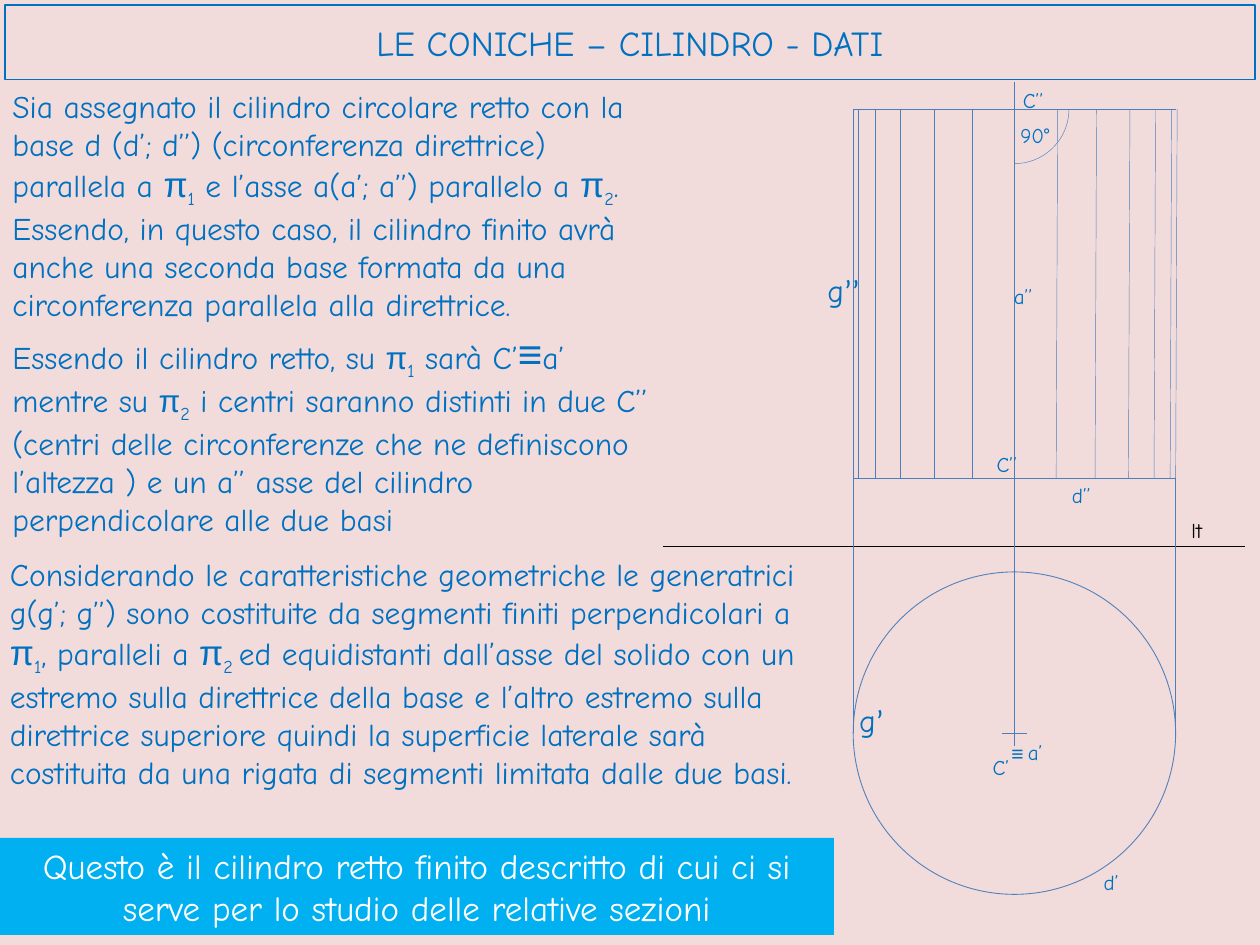
from math import cos, radians

from lxml import etree
from pptx import Presentation
from pptx.dml.color import RGBColor
from pptx.enum.shapes import MSO_CONNECTOR, MSO_SHAPE
from pptx.enum.text import MSO_ANCHOR, MSO_AUTO_SIZE, PP_ALIGN
from pptx.oxml.ns import qn
from pptx.util import Cm, Pt

STRAIGHT = MSO_CONNECTOR.STRAIGHT
RECT, OVAL, ARC = MSO_SHAPE.RECTANGLE, MSO_SHAPE.OVAL, MSO_SHAPE.ARC
TOP, MIDDLE = MSO_ANCHOR.TOP, MSO_ANCHOR.MIDDLE
LEFT, CENTER = PP_ALIGN.LEFT, PP_ALIGN.CENTER
GROW = MSO_AUTO_SIZE.SHAPE_TO_FIT_TEXT

COLORS = {
    "back": "F2DCDB",
    "text": "0070C0",
    "line": "4B7EBC",
    "curve": "4F81BD",
    "band": "00B0F0",
    "white": "FFFFFF",
    "black": "000000",
}
FONT, SIGN, MARK = "Comic Neue", "Arial", "Calibri"

AXIS, RADIUS = 20.45, 3.25
CENTRE = 14.78
UPPER, LOWER = 2.2, 9.65
GROUND = 11.02


def rgb(name):
    return RGBColor.from_string(COLORS[name])


def plane(number, size):
    return [("π", size, SIGN), (number, 18, FONT, True)]


def add_run(para, text, size=18, font=FONT, sub=False, color="text"):
    run = para.add_run()
    run.text = text
    run.font.size = Pt(size)
    run.font.name = font
    run.font.color.rgb = rgb(color)
    if sub:
        run.font._element.set("baseline", "-25000")
    return run


def fill_text(frame, paras, color="text", align=LEFT, anchor=TOP):
    frame.word_wrap = True
    frame.auto_size = GROW
    frame.vertical_anchor = anchor
    for i, runs in enumerate(paras):
        para = frame.paragraphs[0] if i == 0 else frame.add_paragraph()
        para.alignment = align
        for run in runs:
            add_run(para, *run, color=color)


def add_text(slide, x, y, w, h, paras, **style):
    box = slide.shapes.add_textbox(Cm(x), Cm(y), Cm(w), Cm(h))
    fill_text(box.text_frame, paras, **style)


def add_line(slide, x1, y1, x2, y2, color="line"):
    line = slide.shapes.add_connector(STRAIGHT, Cm(x1), Cm(y1), Cm(x2), Cm(y2))
    line.line.color.rgb = rgb(color)
    line.line.width = Pt(0.25)
    etree.SubElement(line._element.spPr, qn("a:effectLst"))


def add_form(slide, kind, x, y, w, h, fill=None, line=None, width=0.25):
    form = slide.shapes.add_shape(kind, Cm(x), Cm(y), Cm(w), Cm(h))
    form.shadow.inherit = False
    if fill:
        form.fill.solid()
        form.fill.fore_color.rgb = rgb(fill)
    else:
        form.fill.background()
    if line:
        form.line.color.rgb = rgb(line)
        form.line.width = Pt(width)
    else:
        form.line.fill.background()
    return form


def add_title(slide):
    title = slide.shapes.title
    title.left, title.top, title.width, title.height = Cm(0.1), Cm(0.1), Cm(25.2), Cm(1.5)
    title.line.color.rgb = rgb("text")
    title.line.width = Pt(0.75)
    frame = title.text_frame
    frame.vertical_anchor = MIDDLE
    para = frame.paragraphs[0]
    para.alignment = CENTER
    run = add_run(para, "LE CONICHE – CILINDRO - DATI", 20)
    edge = etree.Element(qn("a:ln"), w=str(Pt(0.75)))
    paint = etree.SubElement(edge, qn("a:solidFill"))
    etree.SubElement(paint, qn("a:srgbClr"), val=COLORS["text"])
    run.font._element.insert(0, edge)


def draw_solid(slide):
    left, right = AXIS - RADIUS, AXIS + RADIUS
    add_line(slide, 13.36, GROUND, 25.1, GROUND, "black")
    add_form(slide, OVAL, left, CENTRE - RADIUS, 2 * RADIUS, 2 * RADIUS,
             line="curve", width=0.5)
    for x in (left, right):
        add_line(slide, x, CENTRE, x, LOWER)
    for y in (LOWER, UPPER):
        add_line(slide, left, y, right, y)
    add_line(slide, AXIS, 1.65, AXIS, CENTRE)
    add_line(slide, AXIS, CENTRE - 0.25, AXIS, CENTRE + 0.25)
    add_line(slide, AXIS - 0.25, CENTRE, AXIS + 0.25, CENTRE)
    for step in range(13):
        if step == 6:
            continue
        x = AXIS - RADIUS * cos(radians(15 * step))
        lean = 0.03 if step > 6 else 0
        add_line(slide, x, LOWER, x + lean, UPPER)
    arc = add_form(slide, ARC, AXIS - 1.1, UPPER - 1.1, 2.2, 2.2, line="line")
    arc.adjustments[0] = 0
    arc.adjustments[1] = 54


def add_labels(slide):
    labels = [
        ("C’’", 19.84, 8.97, 1.32),
        ("C’’", 20.37, 1.65, 1.32),
        ("C’", 19.76, 15.09, 1.02),
        ("d’’", 21.36, 9.6, 0.97),
        ("d’", 22, 17.4, 0.91),
        ("a’’", 20.19, 5.59, 0.97),
        ("a’", 20.47, 14.78, 0.97),
        ("90°", 20.32, 2.34, 1.55),
    ]
    for text, x, y, w in labels:
        add_text(slide, x, y, w, 0.76, [[(text, 12)]])
    add_text(slide, 23.77, 10.31, 0.97, 0.76, [[("lt", 12)]], color="black")
    add_text(slide, 20.14, 14.81, 0.9, 0.76, [[("≡", 12, SIGN)]], anchor=MIDDLE)
    for mark, x, y, w in (("’’", 16.43, 5.33, 1.2), ("’", 17.07, 14, 1.12)):
        add_text(slide, x, y, w, 1.03, [[("g",), (mark, 18, MARK)]])


def add_body(slide):
    add_text(slide, 0, 1.63, 13.31, 4.95, [
        [("Sia assegnato il cilindro circolare retto con la base d (d’; d’’) "
          "(circonferenza direttrice) parallela a ",),
         *plane("1", 20),
         (" e l’asse a(a’; a’’) parallelo a ",),
         *plane("2", 20),
         (".",)],
        [("Essendo, in questo caso, il cilindro finito avrà anche una seconda "
          "base formata da una circonferenza parallela alla direttrice.",)],
    ])
    add_text(slide, 0, 6.48, 13.56, 4.37, [
        [("Essendo il cilindro retto, su ",),
         *plane("1", 18),
         (" sarà C’",), ("≡", 24, SIGN), ("a’ mentre su ",),
         *plane("2", 18),
         (" i centri saranno distinti in due C’’ (centri delle circonferenze "
          "che ne definiscono l’altezza ) e un a’’ asse del cilindro "
          "perpendicolare alle due basi",)],
    ])
    add_text(slide, -0.05, 11.07, 16.76, 5.74, [
        [("Considerando le caratteristiche geometriche le generatrici "
          "g(g’; g’’) sono costituite da segmenti finiti perpendicolari a ",),
         *plane("1", 20),
         (", paralleli a ",),
         *plane("2 ", 20),
         ("ed equidistanti dall’asse del solido con un estremo sulla direttrice "
          "della base e l’altro estremo sulla direttrice superiore quindi la "
          "superficie laterale sarà costituita da una rigata di segmenti "
          "limitata dalle due basi.",)],
    ])
    band = add_form(slide, RECT, 0, 16.89, 16.81, 1.96, fill="band")
    fill_text(band.text_frame, [
        [("Questo è il cilindro retto finito descritto di cui ci si serve per "
          "lo studio delle relative sezioni", 20)],
    ], color="white", align=CENTER)


def main():
    deck = Presentation()
    deck.slide_width, deck.slide_height = Cm(25.4), Cm(19.05)
    slide = deck.slides.add_slide(deck.slide_layouts[5])
    slide.background.fill.solid()
    slide.background.fill.fore_color.rgb = rgb("back")
    add_title(slide)
    draw_solid(slide)
    add_labels(slide)
    add_body(slide)
    deck.save("out.pptx")


if __name__ == "__main__":
    main()
